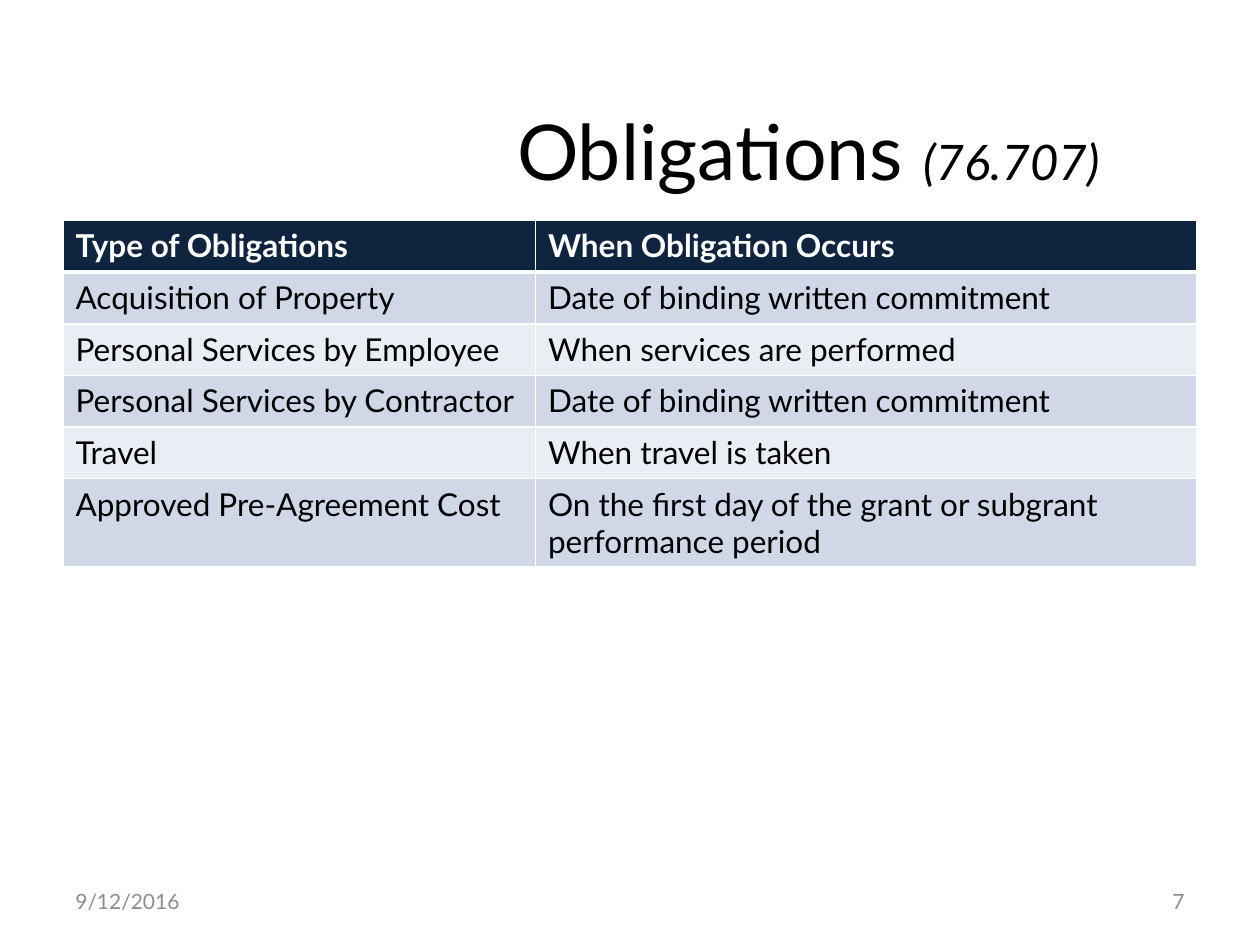
from lxml import etree
from pptx import Presentation
from pptx.dml.color import RGBColor
from pptx.enum.text import MSO_ANCHOR, PP_ALIGN
from pptx.oxml.ns import qn
from pptx.util import Inches, Pt

LEFT, CENTER, RIGHT = PP_ALIGN.LEFT, PP_ALIGN.CENTER, PP_ALIGN.RIGHT
MIDDLE = MSO_ANCHOR.MIDDLE

FONT = "Lato"
BLACK = RGBColor(0x00, 0x00, 0x00)
WHITE = RGBColor(0xFF, 0xFF, 0xFF)
GRAY = RGBColor(0x8C, 0x8C, 0x8C)
NAVY = RGBColor(0x0F, 0x24, 0x3E)
BAND_DARK = RGBColor(0xD0, 0xD8, 0xE8)
BAND_LIGHT = RGBColor(0xE9, 0xED, 0xF4)

COLUMN_WIDTHS = (3.75, 5.25)
ROW_HEIGHT = 0.41
OBLIGATIONS = [
    ("Type of Obligations", "When Obligation Occurs"),
    ("Acquisition of Property", "Date of binding written commitment"),
    ("Personal Services by Employee", "When services are performed"),
    ("Personal Services by Contractor", "Date of binding written commitment"),
    ("Travel", "When travel is taken"),
    ("Approved Pre-Agreement Cost",
     "On the first day of the grant or subgrant performance period"),
]


def format_span(span, size, color, bold=False, italic=False):
    font = span.font
    font.name = FONT
    font.size = Pt(size)
    font.bold = bold
    font.italic = italic
    font.color.rgb = color


def fill_title(page):
    title = page.shapes.title
    title.left, title.top = Inches(3.08), Inches(0.67)
    title.width, title.height = Inches(6.67), Inches(1.03)
    title.text_frame.vertical_anchor = MIDDLE
    para = title.text_frame.paragraphs[0]
    para.alignment = CENTER
    for text, size, italic in (("Obligations ", 44, False), ("(76.707)", 28, True)):
        span = para.add_run()
        span.text = text
        format_span(span, size, BLACK, italic=italic)


def set_borders(cell, bottom_width):
    properties = cell._tc.get_or_add_tcPr()
    widths = {"a:lnL": 1, "a:lnR": 1, "a:lnT": 1, "a:lnB": bottom_width}
    for position, (tag, width) in enumerate(widths.items()):
        line = etree.Element(qn(tag), w=str(Pt(width)))
        fill = etree.SubElement(line, qn("a:solidFill"))
        etree.SubElement(fill, qn("a:srgbClr"), val=str(WHITE))
        properties.insert(position, line)


def format_cell(cell, text, row):
    header = row == 0
    cell.text_frame.text = text
    format_span(cell.text_frame.paragraphs[0].runs[0], 18,
                WHITE if header else BLACK, bold=header)
    cell.fill.solid()
    band = BAND_DARK if row % 2 else BAND_LIGHT
    cell.fill.fore_color.rgb = NAVY if header else band
    set_borders(cell, 3 if header else 1)


def add_obligations_table(page):
    frame = page.shapes.add_table(
        len(OBLIGATIONS), len(COLUMN_WIDTHS), Inches(0.5), Inches(1.75),
        Inches(sum(COLUMN_WIDTHS)), Inches(ROW_HEIGHT * len(OBLIGATIONS)))
    table = frame.table
    for column, width in zip(table.columns, COLUMN_WIDTHS):
        column.width = Inches(width)
    for row, texts in enumerate(OBLIGATIONS):
        table.rows[row].height = Inches(ROW_HEIGHT)
        for column, text in enumerate(texts):
            format_cell(table.cell(row, column), text, row)
    # The header's thick rule is also the top edge of the first body row
    for column in range(len(COLUMN_WIDTHS)):
        properties = table.cell(1, column)._tc.tcPr
        properties.find(qn("a:lnT")).set("w", str(Pt(3)))


def add_footer_text(page, text, left, alignment):
    box = page.shapes.add_textbox(Inches(left), Inches(6.95), Inches(2.33), Inches(0.4))
    box.text_frame.word_wrap = True
    box.text_frame.vertical_anchor = MIDDLE
    box.text_frame.text = text
    para = box.text_frame.paragraphs[0]
    para.alignment = alignment
    format_span(para.runs[0], 12, GRAY)


def main():
    deck = Presentation()
    deck.slide_width, deck.slide_height = Inches(10), Inches(7.5)
    page = deck.slides.add_slide(deck.slide_layouts[5])  # title only

    # Title and table
    fill_title(page)
    add_obligations_table(page)

    # Date and page number
    add_footer_text(page, "9/12/2016", 0.5, LEFT)
    add_footer_text(page, "7", 7.17, RIGHT)

    deck.save("out.pptx")


if __name__ == "__main__":
    main()
